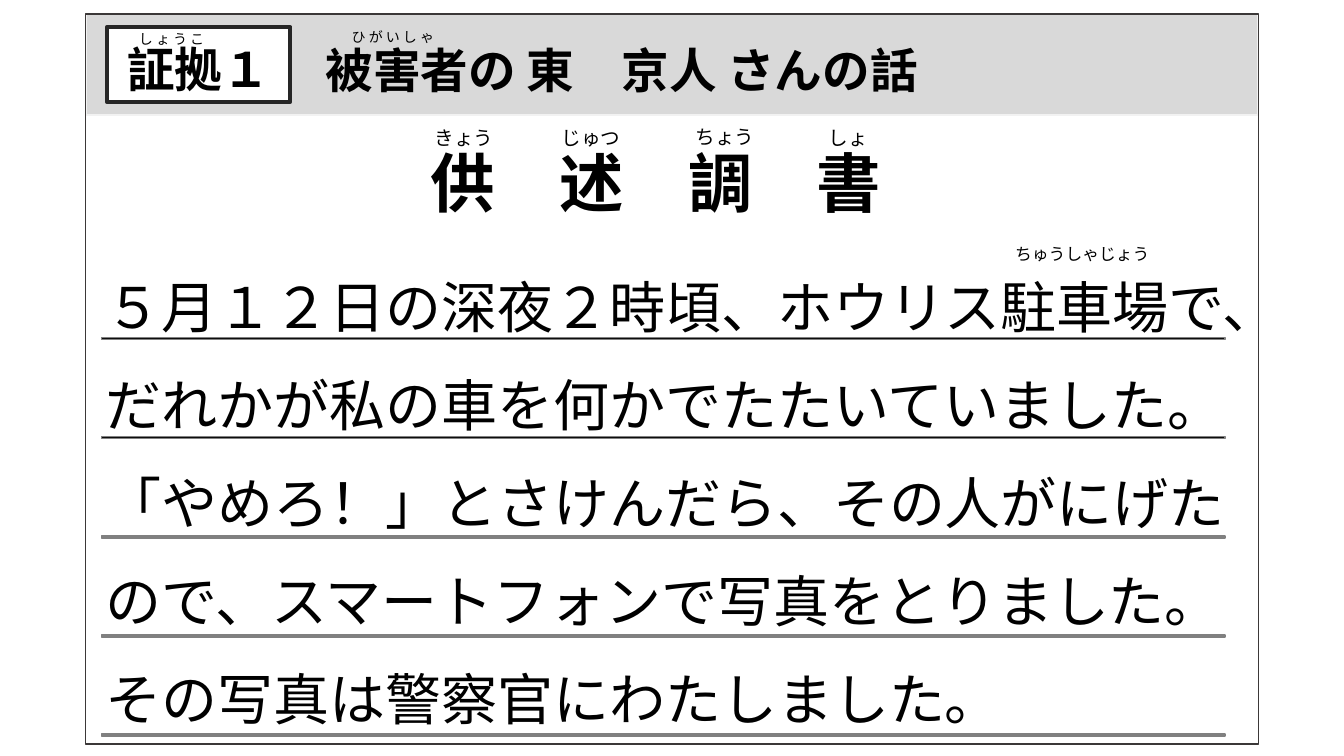
from dataclasses import dataclass

from pptx import Presentation
from pptx.dml.color import RGBColor
from pptx.enum.shapes import MSO_SHAPE
from pptx.enum.text import MSO_ANCHOR as Anchor, MSO_AUTO_SIZE as AutoSize, PP_ALIGN as Align
from pptx.oxml.ns import qn
from pptx.util import Inches, Pt

FONT = "Noto Sans CJK JP"
BLACK = RGBColor(0x00, 0x00, 0x00)
WHITE = RGBColor(0xFF, 0xFF, 0xFF)
BAND = RGBColor(0xD9, 0xD9, 0xD9)
BAND_EDGE = RGBColor(0xF2, 0xF2, 0xF2)
RULE = RGBColor(0x0D, 0x0D, 0x0D)
RULE_EDGE = RGBColor(0x80, 0x80, 0x80)
FRAME = RGBColor(0x3B, 0x38, 0x38)
LABEL_EDGE = RGBColor(0x26, 0x26, 0x26)


@dataclass(frozen=True)
class Box:
    left: float
    top: float
    width: float
    height: float

    def emu(self) -> tuple:
        return tuple(Inches(v) for v in (self.left, self.top, self.width, self.height))


@dataclass(frozen=True)
class Furigana:
    text: str
    box: Box
    size: int
    wrap: bool = True


STATEMENT = [
    "５月１２日の深夜２時頃、ホウリス駐車場で、",
    "だれかが私の車を何かでたたいていました。",
    "「やめろ！」とさけんだら、その人がにげた",
    "ので、スマートフォンで写真をとりました。",
    "その写真は警察官にわたしました。",
]
RULE_TOP, RULE_STEP = 3.35, 0.983

READINGS = [
    Furigana("きょう", Box(4.21, 1.2, 1.28, 0.34), 14),
    Furigana("じゅつ", Box(5.47, 1.2, 1.28, 0.34), 14),
    Furigana("ちょう", Box(6.8, 1.19, 1.28, 0.34), 14),
    Furigana("しょ", Box(8.12, 1.2, 1.28, 0.34), 14),
    Furigana("ちゅうしゃじょう", Box(9.97, 2.37, 1.55, 0.3), 12, wrap=False),
    Furigana("ひ が い し ゃ", Box(3.39, 0.23, 1.85, 0.27), 10),
    Furigana("し ょ う こ", Box(1.28, 0.25, 1.85, 0.27), 10),
]


def write(sp, lines: list[str], size: int, *, bold=False, align=Align.LEFT,
          anchor=Anchor.TOP, spacing=1.0, wrap=True) -> None:
    tf = sp.text_frame
    tf.auto_size = AutoSize.NONE
    tf.word_wrap = wrap
    tf.vertical_anchor = anchor
    for i, line in enumerate(lines):
        p = tf.add_paragraph() if i else tf.paragraphs[0]
        p.alignment = align
        p.line_spacing = spacing
        r = p.add_run()
        r.text = line
        r.font.size, r.font.bold, r.font.name = Pt(size), bold, FONT
        r.font.color.rgb = BLACK
        # East Asian typeface follows the Latin one
        latin = r.font._element.find(qn("a:latin"))
        ea = latin.makeelement(qn("a:ea"), {"typeface": FONT})
        latin.addnext(ea)


def add_rect(s, box: Box, fill: RGBColor | None, edge: RGBColor, weight: float = 1):
    sp = s.shapes.add_shape(MSO_SHAPE.RECTANGLE, *box.emu())
    sp.shadow.inherit = False
    if fill is None:
        sp.fill.background()
    else:
        sp.fill.solid()
        sp.fill.fore_color.rgb = fill
    sp.line.color.rgb = edge
    sp.line.width = Pt(weight)
    return sp


def add_text(s, box: Box, lines: list[str], size: int, **style) -> None:
    write(s.shapes.add_textbox(*box.emu()), lines, size, **style)


def main() -> None:
    prs = Presentation()
    prs.slide_width, prs.slide_height = Inches(13.33), Inches(7.5)
    s = prs.slides.add_slide(prs.slide_layouts[5])

    # Document title
    title = s.shapes.title
    title.left, title.top, title.width, title.height = Box(4.17, 1.37, 5, 0.88).emu()
    write(title, ["供　述　調　書"], 46, bold=True)

    # Header band and page frame
    add_rect(s, Box(0.86, 0.14, 11.61, 1), BAND, BAND_EDGE)
    add_text(s, Box(3.13, 0.35, 6.5, 0.67), ["被害者の 東　京人 さんの話"], 34,
             bold=True, anchor=Anchor.MIDDLE)
    add_rect(s, Box(0.85, 0.14, 11.63, 7.24), None, FRAME)

    # Evidence label
    label = add_rect(s, Box(1.06, 0.27, 1.82, 0.74), WHITE, LABEL_EDGE, 3)
    write(label, ["証拠１"], 34, bold=True, align=Align.CENTER, anchor=Anchor.MIDDLE)
    label.text_frame.margin_top = Inches(0.12)

    # Statement on ruled lines
    for i in range(len(STATEMENT)):
        add_rect(s, Box(1.01, RULE_TOP + i * RULE_STEP, 11.14, 0.02), RULE, RULE_EDGE)
    add_text(s, Box(0.95, 2.35, 11.56, 5.01), STATEMENT, 40, spacing=Pt(70))

    # Furigana readings
    for f in READINGS:
        add_text(s, f.box, [f.text], f.size, wrap=f.wrap)

    prs.save("out.pptx")


if __name__ == "__main__":
    main()
